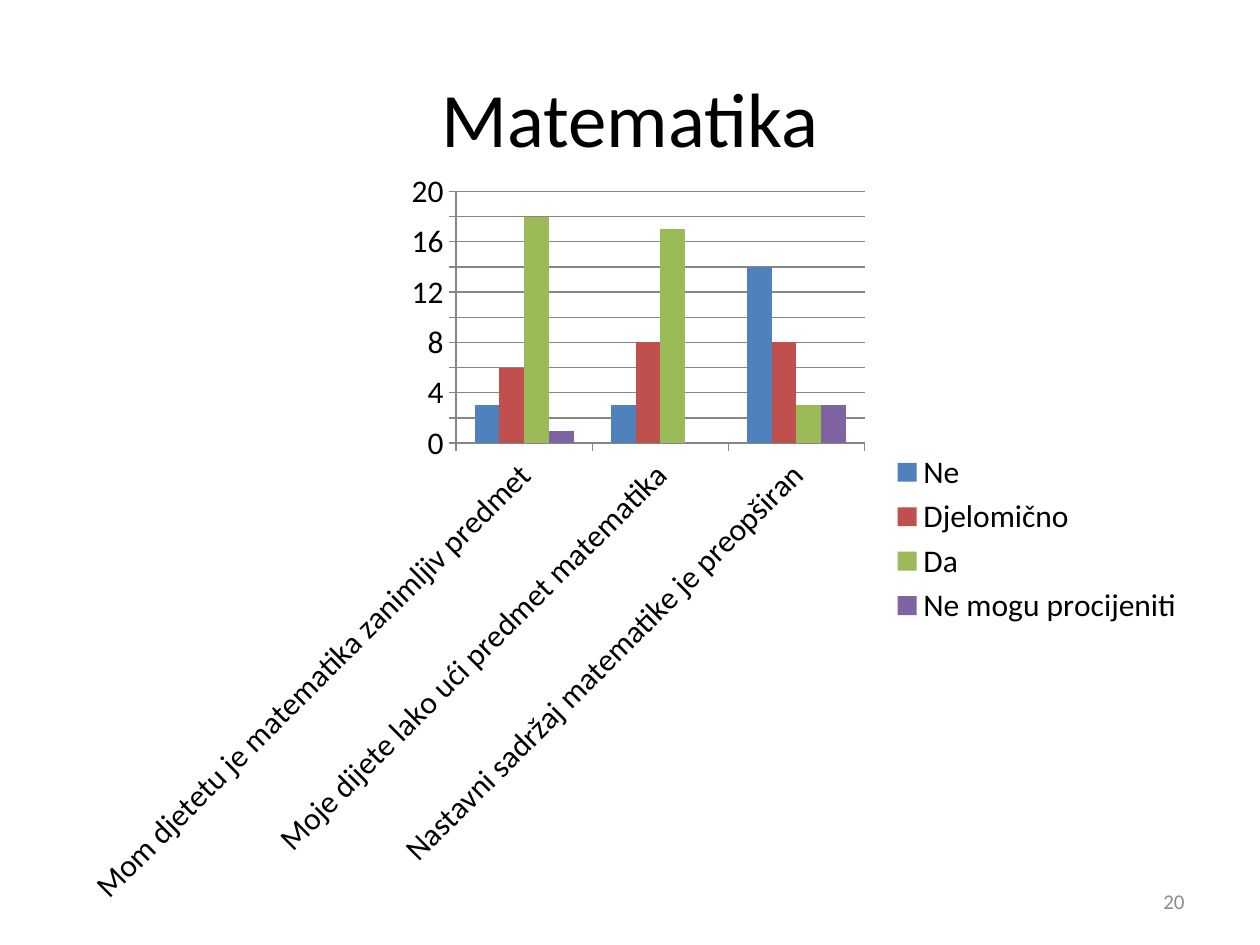
"""Build the Matematika survey slide with its clustered column chart."""
from pptx import Presentation
from pptx.chart.data import CategoryChartData
from pptx.dml.color import RGBColor
from pptx.enum.chart import XL_CHART_TYPE, XL_LEGEND_POSITION, XL_TICK_MARK
from pptx.enum.text import MSO_ANCHOR, PP_ALIGN
from pptx.util import Cm, Pt

COLUMN = XL_CHART_TYPE.COLUMN_CLUSTERED
RIGHT = XL_LEGEND_POSITION.RIGHT
OUTSIDE = XL_TICK_MARK.OUTSIDE
MIDDLE = MSO_ANCHOR.MIDDLE

BLACK = RGBColor(0x00, 0x00, 0x00)
GREY = RGBColor(0x8C, 0x8C, 0x8C)
LINE = RGBColor(0x86, 0x86, 0x86)
BLUE = RGBColor(0x4F, 0x81, 0xBD)
RED = RGBColor(0xC0, 0x50, 0x4D)
GREEN = RGBColor(0x9B, 0xBB, 0x59)
PURPLE = RGBColor(0x80, 0x64, 0xA2)

FONT = "Calibri"
TEXTS = [
    ("Matematika", (1.27, 0.76, 22.86, 3.18), 44, BLACK, PP_ALIGN.CENTER),
    ("20", (18.2, 17.65, 5.93, 1.02), 12, GREY, PP_ALIGN.RIGHT),
]
PLACE = (1.27, 3.17, 22.86, 15.39)
CATS = [
    "Mom djetetu je matematika zanimljiv predmet",
    "Moje dijete lako ući predmet matematika",
    "Nastavni sadržaj matematike je preopširan",
]
SERIES = [
    ("Ne", (3, 3, 14), BLUE),
    ("Djelomično", (6, 8, 8), RED),
    ("Da", (18, 17, 3), GREEN),
    ("Ne mogu procijeniti", (1, 0, 3), PURPLE),
]


def style(font, size, color):
    font.name, font.size, font.color.rgb = FONT, Pt(size), color


def add_text(slide, text, place, size, color, align):
    frame = slide.shapes.add_textbox(*map(Cm, place)).text_frame
    frame.word_wrap = True
    frame.vertical_anchor = MIDDLE
    para = frame.paragraphs[0]
    para.text, para.alignment = text, align
    style(para.font, size, color)


def add_columns(slide):
    data = CategoryChartData()
    data.categories = CATS
    for name, values, _ in SERIES:
        data.add_series(name, values)
    chart = slide.shapes.add_chart(COLUMN, *map(Cm, PLACE), data).chart
    style(chart.font, 18, BLACK)
    chart.has_title = False
    chart.has_legend = True
    chart.legend.position = RIGHT
    chart.legend.include_in_layout = False

    plot = chart.plots[0]
    plot.gap_width, plot.overlap = 150, 0
    plot.vary_by_categories = False
    for item, (_, _, color) in zip(plot.series, SERIES):
        item.format.fill.solid()
        item.format.fill.fore_color.rgb = color

    base, scale = chart.category_axis, chart.value_axis
    scale.has_major_gridlines = True
    for axis in (base, scale):
        axis.major_tick_mark = OUTSIDE
    for part in (base, scale, scale.major_gridlines):
        part.format.line.color.rgb = LINE
        part.format.line.width = Pt(0.75)


def main():
    deck = Presentation()
    deck.slide_width, deck.slide_height = Cm(25.4), Cm(19.05)
    slide = deck.slides.add_slide(deck.slide_layouts[6])
    add_columns(slide)
    for row in TEXTS:
        add_text(slide, *row)
    deck.save("out.pptx")


if __name__ == "__main__":
    main()
